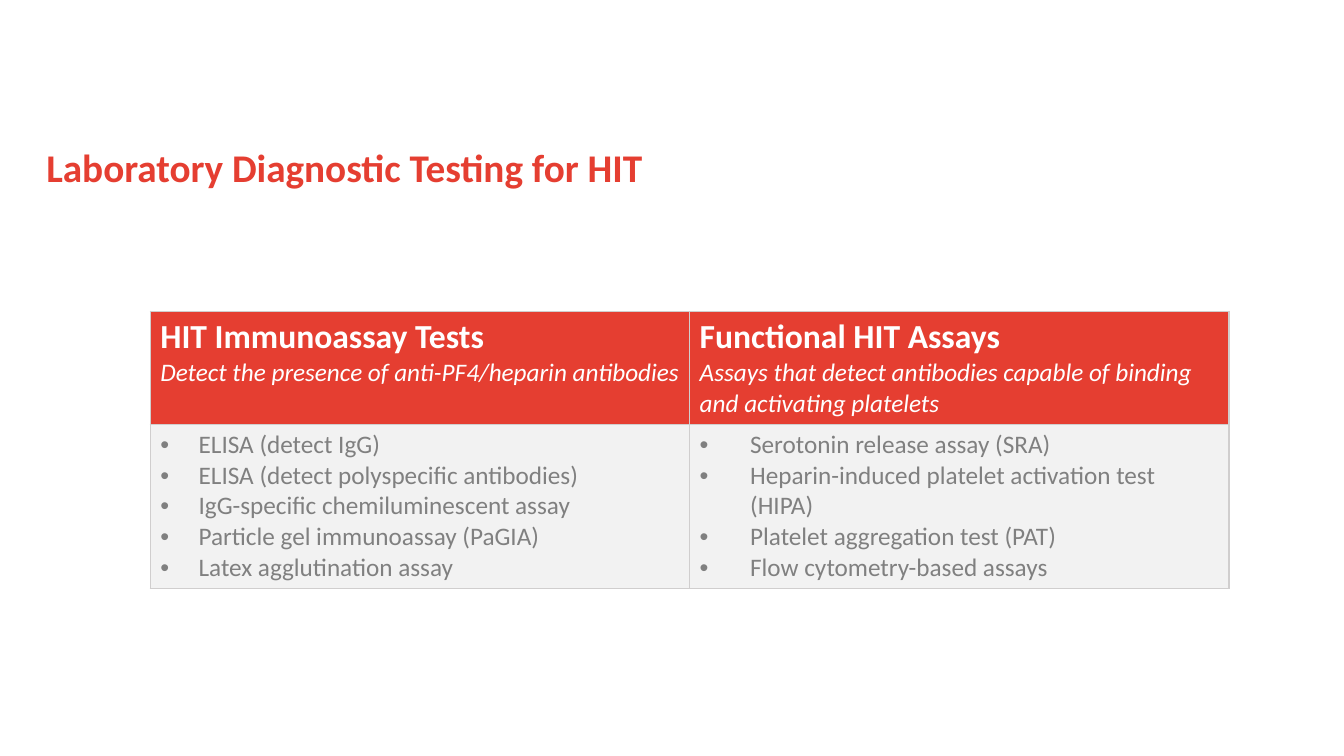
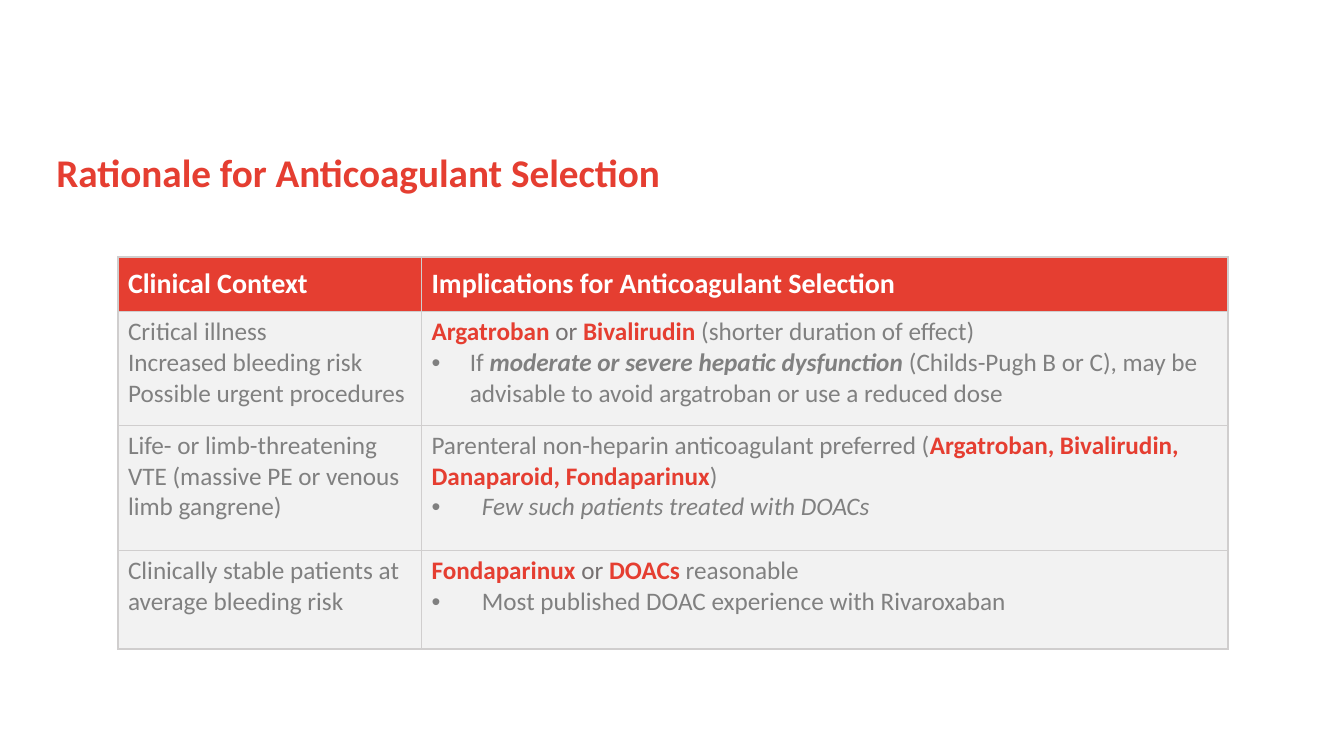
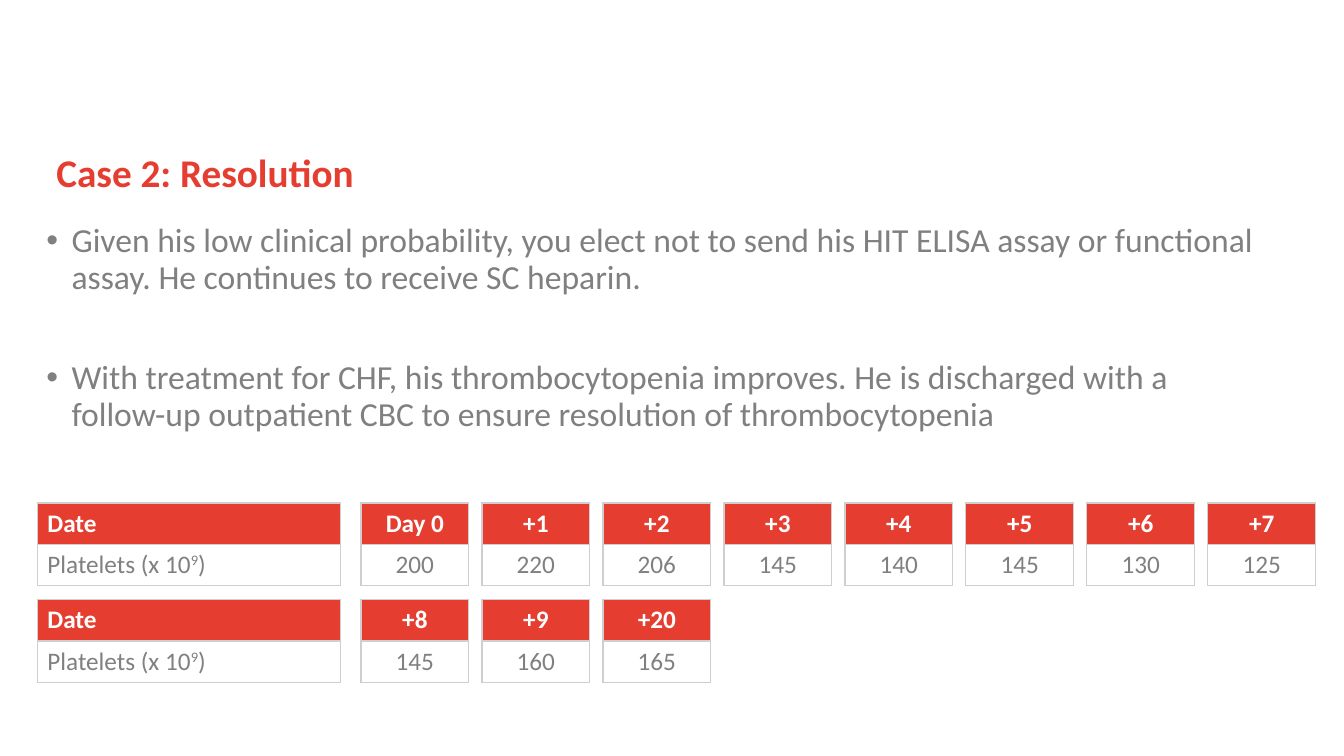
from dataclasses import dataclass

from lxml import etree
from pptx import Presentation
from pptx.dml.color import RGBColor
from pptx.enum import text
from pptx.oxml.ns import qn
from pptx.util import Inches, Pt


# Theme: colours, type sizes and shared geometry
@dataclass(frozen=True)
class Theme:
    font: str = "Calibri"
    red: str = "E53E31"
    white: str = "FFFFFF"
    grey: str = "808080"
    dark_grey: str = "767171"
    pale: str = "F2F2F2"
    border: str = "D0CECE"
    title_size: int = 28
    large_size: int = 24
    header_size: int = 20
    text_size: int = 18
    line_spacing: float = 0.9
    title_box: tuple = (0.46, 1.47, 12, 0.78)
    body_box: tuple = (0.46, 2.22, 12, 4.32)


THEME = Theme()


@dataclass(frozen=True)
class Style:
    size: int = THEME.text_size
    color: str = THEME.grey
    bold: bool = False
    italic: bool = False
    baseline: int = 0


TITLE = Style(THEME.title_size, THEME.red, bold=True)
BODY = Style(THEME.large_size)
HEADING = Style(THEME.large_size, THEME.white, bold=True)
SUBHEADING = Style(color=THEME.white, italic=True)
COLUMN_HEAD = Style(THEME.header_size, THEME.white, bold=True)
DATE_HEAD = Style(color=THEME.white, bold=True)
PLAIN = Style()
DRUG = Style(color=THEME.red, bold=True)
JOINER = Style(color=THEME.dark_grey)
STRESS = Style(bold=True, italic=True)
ASIDE = Style(italic=True)
SUPERSCRIPT = Style(baseline=30000)


@dataclass(frozen=True)
class Line:
    """One paragraph: (words, style) pairs, with a bullet if indent is set."""
    pieces: tuple
    indent: float = 0


def line(words, style=PLAIN, indent=0):
    return Line(((words, style),), indent)


def lines(*texts, indent=0):
    return [line(words, indent=indent) for words in texts]


# Text
def style_run(run, style):
    run.font.name = THEME.font
    run.font.size = Pt(style.size)
    run.font.bold = style.bold
    run.font.italic = style.italic
    run.font.color.rgb = RGBColor.from_string(style.color)
    if style.baseline:
        run._r.get_or_add_rPr().set("baseline", str(style.baseline))


def set_bullet(paragraph, indent):
    properties = paragraph._p.get_or_add_pPr()
    properties.set("marL", str(Inches(indent)))
    properties.set("indent", str(-Inches(indent)))
    etree.SubElement(properties, qn("a:buFont")).set("typeface", "Arial")
    etree.SubElement(properties, qn("a:buChar")).set("char", "•")


def write_lines(frame, content, align=text.PP_ALIGN.LEFT):
    for index, item in enumerate(content):
        paragraph = frame.add_paragraph() if index else frame.paragraphs[0]
        paragraph.alignment = align
        if item.indent:
            set_bullet(paragraph, item.indent)
        for words, style in item.pieces:
            run = paragraph.add_run()
            run.text = words
            style_run(run, style)


def place(shape, box):
    shape.left, shape.top, shape.width, shape.height = map(Inches, box)


def fill_placeholder(holder, box, content, inset):
    place(holder, box)
    frame = holder.text_frame
    frame.word_wrap = True
    frame.auto_size = text.MSO_AUTO_SIZE.NONE
    frame.vertical_anchor = text.MSO_ANCHOR.TOP
    frame.margin_left = frame.margin_right = Inches(inset)
    frame.margin_top = frame.margin_bottom = Inches(inset / 2)
    write_lines(frame, content)
    for paragraph in frame.paragraphs:
        paragraph.line_spacing = THEME.line_spacing
        paragraph.space_before = Pt(0)


def add_slide(prs, layout_index, title, inset=0.1):
    slide = prs.slides.add_slide(prs.slide_layouts[layout_index])
    fill_placeholder(slide.shapes.title, THEME.title_box,
                     [line(title, TITLE)], inset)
    return slide


# Tables
def set_borders(cell):
    properties = cell._tc.get_or_add_tcPr()
    for side in ("lnL", "lnR", "lnT", "lnB"):
        edge = etree.SubElement(properties, qn(f"a:{side}"), w=str(Pt(1)))
        solid = etree.SubElement(edge, qn("a:solidFill"))
        etree.SubElement(solid, qn("a:srgbClr"), val=THEME.border)


def add_table(slide, left, top, widths, heights, rows, body_fill=None,
              align=text.PP_ALIGN.LEFT, head_anchor=text.MSO_ANCHOR.TOP):
    table = slide.shapes.add_table(
        len(heights), len(widths), Inches(left), Inches(top),
        Inches(sum(widths)), Inches(sum(heights))).table
    table.horz_banding = False
    for column, width in zip(table.columns, widths):
        column.width = Inches(width)
    for row_index, (height, row) in enumerate(zip(heights, rows)):
        table.rows[row_index].height = Inches(height)
        for column_index, content in enumerate(row):
            cell = table.cell(row_index, column_index)
            set_borders(cell)
            fill = body_fill if row_index else THEME.red
            if fill:
                cell.fill.solid()
                cell.fill.fore_color.rgb = RGBColor.from_string(fill)
            else:
                cell.fill.background()
            if row_index == 0:
                cell.vertical_anchor = head_anchor
            write_lines(cell.text_frame, content, align)


def add_platelet_row(slide, top, counts):
    """A label table followed by one small table for each day."""
    label_left, label_width = 0.37, 3.01
    first_day, day_pitch, day_width = 3.58, 1.2, 1.07
    heights = (0.41, 0.41)
    unit = Line((("Platelets (x 10", PLAIN), ("9", SUPERSCRIPT), (")", PLAIN)))
    add_table(slide, label_left, top, [label_width], heights,
              [[[line("Date", DATE_HEAD)]], [[unit]]])
    for index, (day, count) in enumerate(counts):
        add_table(slide, first_day + index * day_pitch, top, [day_width],
                  heights, [[[line(day, DATE_HEAD)]], [[line(count)]]],
                  align=text.PP_ALIGN.CENTER)


# Slides
def testing_slide(prs):
    slide = add_slide(prs, 5, "Laboratory Diagnostic Testing for HIT", inset=0)
    headings = [
        [line("HIT Immunoassay Tests", HEADING),
         line("Detect the presence of anti-PF4/heparin antibodies",
              SUBHEADING)],
        [line("Functional HIT Assays", HEADING),
         line("Assays that detect antibodies capable of binding and "
              "activating platelets", SUBHEADING)],
    ]
    assays = [
        lines("ELISA (detect IgG)", "ELISA (detect polyspecific antibodies)",
              "IgG-specific chemiluminescent assay",
              "Particle gel immunoassay (PaGIA)",
              "Latex agglutination assay", indent=0.38),
        lines("Serotonin release assay (SRA)",
              "Heparin-induced platelet activation test (HIPA)",
              "Platelet aggregation test (PAT)",
              "Flow cytometry-based assays", indent=0.5),
    ]
    add_table(slide, 1.49, 3.09, (5.35, 5.35), (1.12, 1.62),
              [headings, assays], THEME.pale)


def rationale_slide(prs):
    slide = add_slide(prs, 5, "Rationale for Anticoagulant Selection")
    rows = [
        [[line("Clinical Context", COLUMN_HEAD)],
         [line("Implications for Anticoagulant Selection", COLUMN_HEAD)]],
        [lines("Critical illness", "Increased bleeding risk",
               "Possible urgent procedures"),
         [Line((("Argatroban ", DRUG), ("or", JOINER),
                (" Bivalirudin ", DRUG),
                ("(shorter duration of effect)", PLAIN))),
          Line((("If ", PLAIN),
                ("moderate or severe hepatic dysfunction ", STRESS),
                ("(Childs-Pugh B or C), may be advisable to avoid argatroban "
                 "or use a reduced dose", PLAIN)), 0.38)]],
        [lines("Life- or limb-threatening VTE (massive PE or venous limb "
               "gangrene)"),
         [Line((("Parenteral non-heparin anticoagulant preferred (", PLAIN),
                ("Argatroban, Bivalirudin, Danaparoid, Fondaparinux", DRUG),
                (")", PLAIN))),
          line("Few such patients treated with DOACs", ASIDE, 0.5)]],
        [lines("Clinically stable patients at average bleeding risk"),
         [Line((("Fondaparinux ", DRUG), ("or ", JOINER), ("DOACs ", DRUG),
                ("reasonable", PLAIN))),
          line("Most published DOAC experience with Rivaroxaban",
               indent=0.5)]],
    ]
    add_table(slide, 1.17, 2.55, (3.01, 8), (0.54, 1.13, 1.24, 0.98), rows,
              THEME.pale, head_anchor=text.MSO_ANCHOR.MIDDLE)


def resolution_slide(prs):
    slide = add_slide(prs, 1, "Case 2: Resolution")
    course = slide.placeholders[1]
    fill_placeholder(course, THEME.body_box, [
        line("Given his low clinical probability, you elect not to send his "
             "HIT ELISA assay or functional assay. He continues to receive "
             "SC heparin.", BODY, 0.25),
        line("With treatment for CHF, his thrombocytopenia improves. He is "
             "discharged with a follow-up outpatient CBC to ensure "
             "resolution of thrombocytopenia", BODY, 0.25),
    ], inset=0)
    course.text_frame.paragraphs[1].space_before = Pt(46)

    add_platelet_row(slide, 4.99, [
        ("Day 0", "200"), ("+1", "220"), ("+2", "206"), ("+3", "145"),
        ("+4", "140"), ("+5", "145"), ("+6", "130"), ("+7", "125")])
    add_platelet_row(slide, 5.95, [
        ("+8", "145"), ("+9", "160"), ("+20", "165")])


def main():
    prs = Presentation()
    prs.slide_width, prs.slide_height = Inches(13.33), Inches(7.5)
    testing_slide(prs)
    rationale_slide(prs)
    resolution_slide(prs)
    prs.save("out.pptx")


if __name__ == "__main__":
    main()
